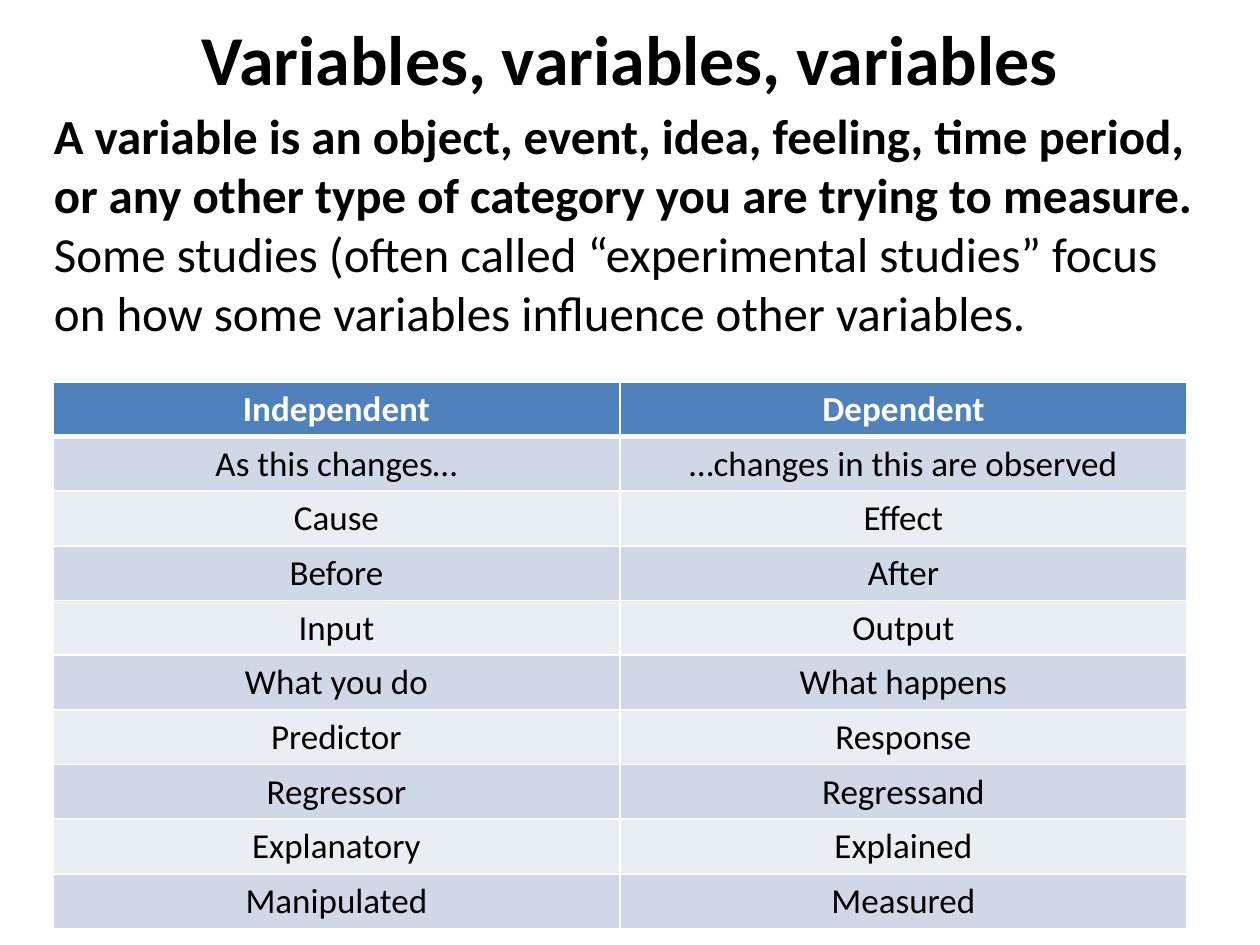
from dataclasses import dataclass

from lxml import etree
from pptx import Presentation
from pptx import util as u
from pptx.dml.color import RGBColor
from pptx.enum import text
from pptx.oxml.ns import qn


@dataclass(frozen=True)
class Theme:
    font: str = "Calibri"
    ink: str = "000000"
    paper: str = "FFFFFF"
    header: str = "4F81BD"
    bands: tuple = ("D0D8E8", "E9EDF4")
    title_size: int = 40
    body_size: int = 28
    table_size: int = 20
    rule: int = 1
    header_rule: int = 3


THEME = Theme()

TITLE = "Variables, variables, variables"
DEFINITION = ("A variable is an object, event, idea, feeling, time period, "
              "or any other type of category you are trying to measure. ")
STUDIES = ("Some studies (often called “experimental studies” focus "
           "on how some variables influence other variables.")
PAIRS = [
    ("Independent", "Dependent"),
    ("As this changes…", "…changes in this are observed"),
    ("Cause", "Effect"),
    ("Before", "After"),
    ("Input", "Output"),
    ("What you do", "What happens"),
    ("Predictor", "Response"),
    ("Regressor", "Regressand"),
    ("Explanatory", "Explained"),
    ("Manipulated", "Measured"),
]


def add_span(para, words, size, bold=False, color=THEME.ink):
    span = para.add_run()
    span.text = words
    span.font.name = THEME.font
    span.font.size = u.Pt(size)
    span.font.bold = bold
    span.font.color.rgb = RGBColor.from_string(color)


def add_frame(page, box, anchor):
    frame = page.shapes.add_textbox(*map(u.Inches, box)).text_frame
    frame.word_wrap = True
    frame.vertical_anchor = anchor
    return frame


def add_title(page, box):
    para = add_frame(page, box, text.MSO_ANCHOR.MIDDLE).paragraphs[0]
    para.alignment = text.PP_ALIGN.CENTER
    add_span(para, TITLE, THEME.title_size, bold=True)


def add_definition(page, box):
    frame = add_frame(page, box, text.MSO_ANCHOR.TOP)
    frame.auto_size = text.MSO_AUTO_SIZE.SHAPE_TO_FIT_TEXT
    para = frame.paragraphs[0]
    add_span(para, DEFINITION, THEME.body_size, bold=True)
    add_span(para, STUDIES, THEME.body_size)


def set_borders(cell, widths):
    """Draw the cell edges; widths maps L, R, T and B to points."""
    props = cell._tc.get_or_add_tcPr()
    for side, width in widths.items():
        line = etree.SubElement(props, qn(f"a:ln{side}"), w=str(u.Pt(width)))
        fill = etree.SubElement(line, qn("a:solidFill"))
        etree.SubElement(fill, qn("a:srgbClr"), val=THEME.paper)


def add_pairs_table(page, box):
    table = page.shapes.add_table(
        len(PAIRS), len(PAIRS[0]), *map(u.Inches, box)).table
    for r, pair in enumerate(PAIRS):
        is_header = r == 0
        fill = THEME.header if is_header else THEME.bands[(r - 1) % 2]
        color = THEME.paper if is_header else THEME.ink
        # The heavy rule is shared by the header and the first row
        top = THEME.header_rule if r == 1 else THEME.rule
        bottom = THEME.header_rule if is_header else THEME.rule
        for c, words in enumerate(pair):
            cell = table.cell(r, c)
            set_borders(cell, {"L": THEME.rule, "R": THEME.rule,
                               "T": top, "B": bottom})
            cell.fill.solid()
            cell.fill.fore_color.rgb = RGBColor.from_string(fill)
            para = cell.text_frame.paragraphs[0]
            para.alignment = text.PP_ALIGN.CENTER
            add_span(para, words, THEME.table_size, is_header, color)


def main():
    deck = Presentation()
    deck.slide_width, deck.slide_height = u.Inches(10), u.Inches(7.5)
    page = deck.slides.add_slide(deck.slide_layouts[6])

    # Boxes are left, top, width, height in inches
    add_title(page, (0.5, 0, 9, 0.92))
    add_pairs_table(page, (0.42, 3.03, 9, 4.1))
    add_definition(page, (0.33, 0.79, 9.42, 1.99))

    deck.save("out.pptx")


if __name__ == "__main__":
    main()
